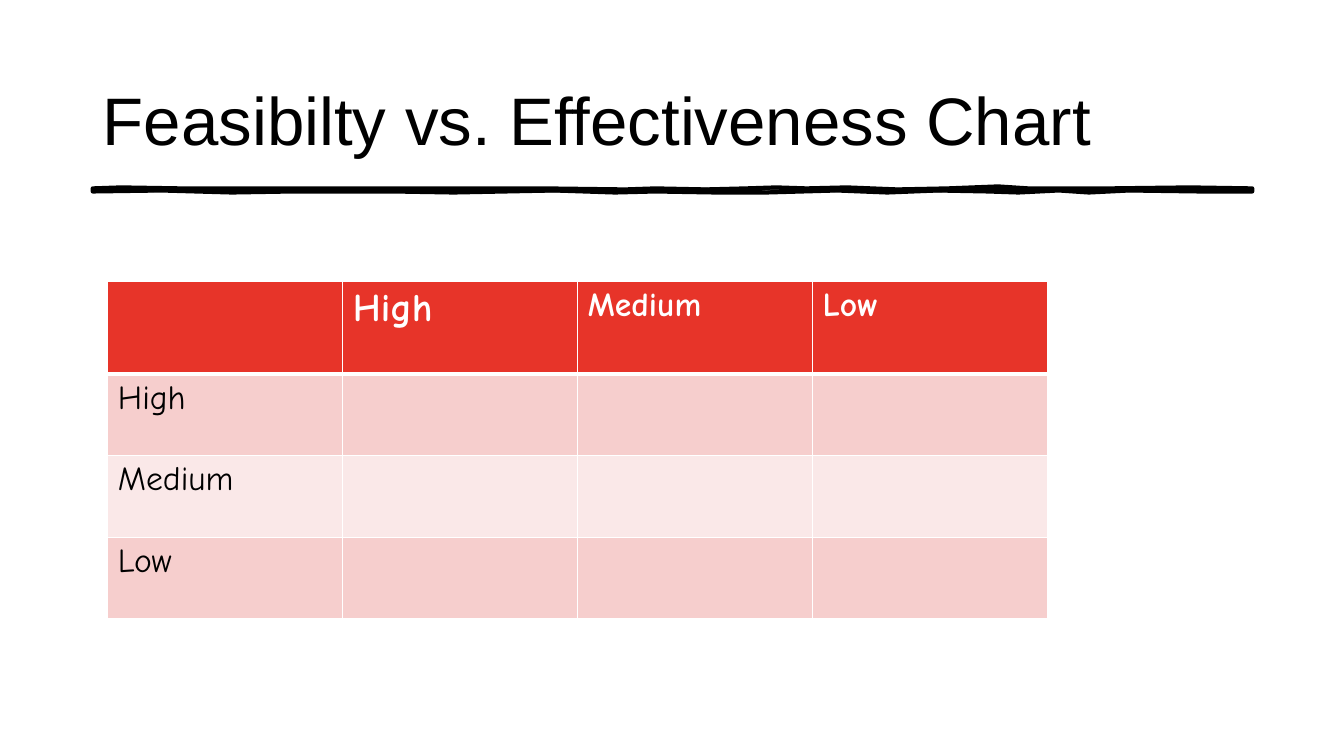
from dataclasses import dataclass

from lxml.etree import SubElement
from pptx import Presentation
from pptx.dml.color import RGBColor
from pptx.enum.text import MSO_ANCHOR, MSO_AUTO_SIZE, PP_ALIGN
from pptx.oxml.ns import qn
from pptx.util import Inches, Pt

BLACK = RGBColor(0x00, 0x00, 0x00)
WHITE = RGBColor(0xFF, 0xFF, 0xFF)
RED = RGBColor(0xE7, 0x34, 0x29)
PINK = RGBColor(0xF6, 0xCE, 0xCD)
PALE_PINK = RGBColor(0xFA, 0xE8, 0xE8)

LEVELS = ("High", "Medium", "Low")
COLUMN_WIDTH = 2.33


@dataclass(frozen=True)
class BrushStroke:
    top: tuple
    bottom: tuple
    filled: bool


@dataclass(frozen=True)
class TableRow:
    labels: tuple
    height: float
    fill: RGBColor
    color: RGBColor
    sizes: tuple
    bold: bool
    line_above: float
    line_below: float


STROKES = (
    BrushStroke(
        top=((0.92, 1.87), (1.2, 1.86), (1.8, 1.87), (4.3, 1.87), (5.4, 1.87),
             (6.2, 1.88), (6.5, 1.87), (7.0, 1.88), (7.4, 1.87), (7.7, 1.86),
             (8.0, 1.87), (8.4, 1.86), (8.9, 1.88), (9.4, 1.87), (9.9, 1.85),
             (10.2, 1.87), (11.0, 1.87), (11.8, 1.86), (12.42, 1.87)),
        bottom=((12.42, 1.9), (11.9, 1.9), (11.2, 1.89), (10.8, 1.91),
                (10.5, 1.89), (10.1, 1.91), (9.8, 1.9), (9.3, 1.89),
                (8.8, 1.91), (8.3, 1.89), (7.6, 1.91), (7.1, 1.91),
                (6.5, 1.9), (6.1, 1.91), (5.5, 1.89), (4.5, 1.91),
                (3.9, 1.9), (2.9, 1.9), (2.3, 1.91), (1.6, 1.89), (0.92, 1.9)),
        filled=False,
    ),
    BrushStroke(
        top=((0.92, 1.87), (1.2, 1.88), (1.8, 1.86), (2.1, 1.88), (2.6, 1.86),
             (3.2, 1.88), (3.9, 1.86), (4.5, 1.88), (5.5, 1.87), (6.1, 1.88),
             (6.9, 1.86), (7.7, 1.88), (8.4, 1.86), (9.4, 1.87), (10.1, 1.86),
             (10.7, 1.88), (11.5, 1.85), (11.9, 1.88), (12.42, 1.87)),
        bottom=((12.42, 1.9), (12.0, 1.9), (11.5, 1.91), (10.8, 1.9),
                (10.1, 1.91), (9.7, 1.89), (9.3, 1.91), (8.9, 1.89),
                (8.1, 1.91), (7.6, 1.89), (7.2, 1.91), (6.6, 1.89),
                (6.1, 1.91), (5.2, 1.91), (3.9, 1.91), (3.4, 1.89),
                (2.6, 1.91), (1.8, 1.9), (1.3, 1.91), (0.92, 1.9)),
        filled=True,
    ),
)

ROWS = (
    TableRow(("",) + LEVELS, 0.92, RED, WHITE, (24, 28, 24, 24), True, 1, 3),
    *(
        TableRow((level, "", "", ""), 0.81, fill, BLACK, (24,) * 4, False, above, 1)
        for level, fill, above in zip(LEVELS, (PINK, PALE_PINK, PINK), (3, 1, 1))
    ),
)


def write(frame, text: str, *, size: float, font: str, color: RGBColor,
          bold: bool = False) -> None:
    paragraph = frame.paragraphs[0]
    paragraph.alignment = PP_ALIGN.LEFT
    run = paragraph.add_run()
    run.text = text
    run.font.size = Pt(size)
    run.font.name = font
    run.font.bold = bold
    run.font.color.rgb = color


def draw_stroke(shapes, stroke: BrushStroke) -> None:
    outline = [(Inches(x), Inches(y)) for x, y in stroke.top + stroke.bottom]
    builder = shapes.build_freeform(*outline[0], scale=1.0)
    builder.add_line_segments(outline[1:], close=True)
    underline = builder.convert_to_shape()
    underline.shadow.inherit = False
    if stroke.filled:
        underline.fill.solid()
        underline.fill.fore_color.rgb = BLACK
        underline.line.fill.background()
    else:
        underline.fill.background()
        underline.line.color.rgb = BLACK
        underline.line.width = Pt(3)


def set_borders(cell, above: float, below: float) -> None:
    properties = cell._tc.get_or_add_tcPr()
    widths = {"a:lnL": 1, "a:lnR": 1, "a:lnT": above, "a:lnB": below}
    for position, (tag, width) in enumerate(widths.items()):
        border = SubElement(properties, qn(tag), w=str(Pt(width)))
        solid = SubElement(border, qn("a:solidFill"))
        SubElement(solid, qn("a:srgbClr"), val=str(WHITE))
        properties.insert(position, border)


def draw_table(shapes, rows: tuple) -> None:
    column_count = len(rows[0].labels)
    levels_table = shapes.add_table(
        len(rows), column_count, Inches(1.07), Inches(2.79),
        Inches(COLUMN_WIDTH * column_count),
        Inches(sum(row.height for row in rows)),
    ).table
    for column in levels_table.columns:
        column.width = Inches(COLUMN_WIDTH)
    for row_index, row in enumerate(rows):
        levels_table.rows[row_index].height = Inches(row.height)
        for column_index, (label, size) in enumerate(zip(row.labels, row.sizes)):
            cell = levels_table.cell(row_index, column_index)
            cell.fill.solid()
            cell.fill.fore_color.rgb = row.fill
            set_borders(cell, row.line_above, row.line_below)
            if label:
                write(cell.text_frame, label, size=size, font="Comic Neue",
                      color=row.color, bold=row.bold)


def place_title(title) -> None:
    title.left, title.top = Inches(0.92), Inches(0.4)
    title.width, title.height = Inches(11.5), Inches(1.45)
    frame = title.text_frame
    frame.word_wrap = True
    frame.auto_size = MSO_AUTO_SIZE.NONE
    frame.vertical_anchor = MSO_ANCHOR.MIDDLE
    frame.margin_top = Inches(0.16)
    write(frame, "Feasibilty vs. Effectiveness Chart", size=48, font="Arial",
          color=BLACK)


def main() -> None:
    presentation = Presentation()
    presentation.slide_width = Inches(13.33)
    presentation.slide_height = Inches(7.5)
    slide = presentation.slides.add_slide(presentation.slide_layouts[5])
    slide.background.fill.solid()
    slide.background.fill.fore_color.rgb = WHITE
    place_title(slide.shapes.title)
    for stroke in STROKES:
        draw_stroke(slide.shapes, stroke)
    draw_table(slide.shapes, ROWS)
    presentation.save("out.pptx")


if __name__ == "__main__":
    main()
